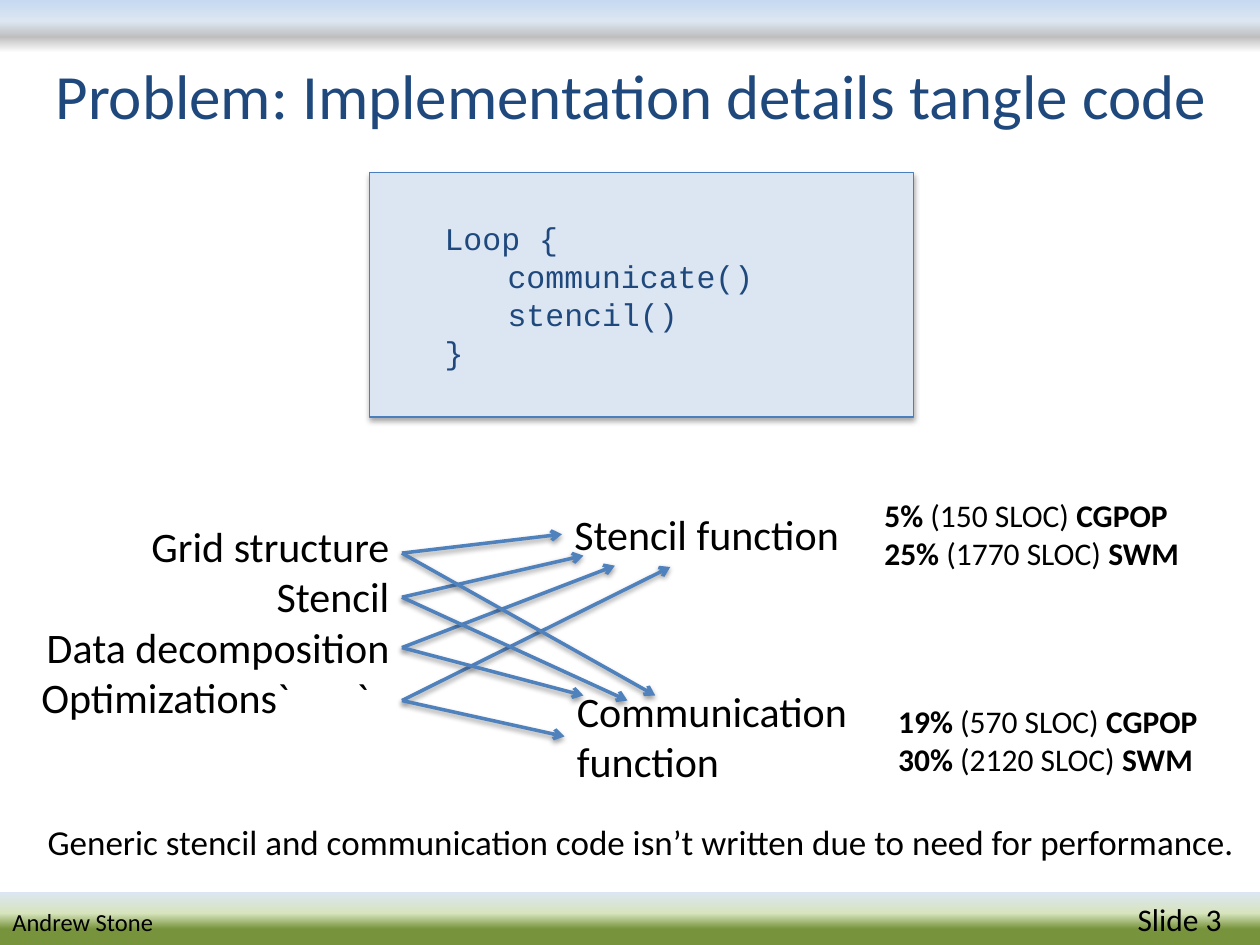
from typing import NamedTuple, Optional

from lxml.etree import SubElement
from pptx import Presentation
from pptx.dml.color import RGBColor
from pptx.enum.dml import MSO_THEME_COLOR
from pptx.enum.shapes import MSO_CONNECTOR, MSO_SHAPE
from pptx.enum.text import MSO_ANCHOR, MSO_AUTO_SIZE, PP_ALIGN
from pptx.oxml.ns import qn
from pptx.shapes.autoshape import Shape
from pptx.slide import Slide
from pptx.text.text import TextFrame
from pptx.util import Inches, Pt

BLACK = RGBColor(0x00, 0x00, 0x00)
NAVY = RGBColor(0x1F, 0x49, 0x7D)
BLUE = RGBColor(0x4F, 0x81, 0xBD)
EDGE = RGBColor(0x4B, 0x7E, 0xBC)
SKY = RGBColor(0xC6, 0xD9, 0xF1)
PALE = RGBColor(0xDC, 0xE6, 0xF2)
GRAY = RGBColor(0xBF, 0xBF, 0xBF)
WHITE = RGBColor(0xFF, 0xFF, 0xFF)
LIME = RGBColor(0xD7, 0xE4, 0xBD)
GREEN = RGBColor(0x77, 0x93, 0x3C)


class Run(NamedTuple):
    text: str
    bold: Optional[bool] = None


class Label(NamedTuple):
    left: float
    top: float
    width: float
    height: float
    lines: list[list[Run]]
    size: int = 24
    align: PP_ALIGN = PP_ALIGN.LEFT
    wrap: bool = False


class Arrow(NamedTuple):
    start: float
    x: float
    y: float
    goal: Optional[Shape] = None


class Stop(NamedTuple):
    place: int
    color: RGBColor


def plain(*lines: str) -> list[list[Run]]:
    return [[Run(line)] for line in lines]


def share(part: str, count: int, model: str) -> list[Run]:
    return [Run(part, True), Run(f" ({count} SLOC) "), Run(model, True)]


def write(frame: TextFrame, lines: list[list[Run]], size: int, color: RGBColor,
          face: str = "Calibri", align: PP_ALIGN = PP_ALIGN.LEFT) -> None:
    for index, line in enumerate(lines):
        para = frame.add_paragraph() if index else frame.paragraphs[0]
        para.alignment = align
        para.font.name = face
        para.font.size = Pt(size)
        para.font.color.rgb = color
        for item in line:
            run = para.add_run()
            run.text = item.text
            run.font.bold = item.bold


def add_label(slide: Slide, label: Label) -> Shape:
    box = slide.shapes.add_textbox(*map(Inches, label[:4]))
    frame = box.text_frame
    frame.word_wrap = label.wrap
    frame.auto_size = MSO_AUTO_SIZE.SHAPE_TO_FIT_TEXT
    write(frame, label.lines, label.size, BLACK, align=label.align)
    return box


def add_band(slide: Slide, top: float, stops: list[Stop]) -> Shape:
    band = slide.shapes.add_shape(
        MSO_SHAPE.RECTANGLE, 0, Inches(top), Inches(10), Inches(0.42))
    band.shadow.inherit = False
    band.line.fill.background()
    band.fill.gradient()
    band.fill.gradient_angle = 270
    ramp = next(band._element.iter(qn("a:gsLst")))
    ramp.clear()
    for stop in stops:
        mark = SubElement(ramp, qn("a:gs"), pos=str(stop.place * 1000))
        SubElement(mark, qn("a:srgbClr"), val=str(stop.color))
    return band


def add_arrow(slide: Slide, arrow: Arrow) -> None:
    line = slide.shapes.add_connector(
        MSO_CONNECTOR.STRAIGHT, Inches(3.19), Inches(arrow.start),
        Inches(arrow.x), Inches(arrow.y))
    if arrow.goal is not None:
        line.end_connect(arrow.goal, 1)
    line.line.color.rgb = BLUE
    line.line.width = Pt(2)
    SubElement(line.line._get_or_add_ln(), qn("a:tailEnd"), type="arrow")


def add_foot(slide: Slide) -> None:
    band = add_band(slide, 7.08, [Stop(0, PALE), Stop(40, LIME), Stop(70, GREEN)])
    frame = band.text_frame
    frame.vertical_anchor = MSO_ANCHOR.MIDDLE
    write(frame, [[Run("Andrew Stone\t"), Run("Slide 3")]], 14, BLACK)
    para = frame.paragraphs[0]
    para.runs[1].font.size = Pt(18)
    tabs = para._p.get_or_add_pPr().makeelement(qn("a:tabLst"))
    SubElement(tabs, qn("a:tab"), pos=str(Inches(8.93)), algn="l")
    para._p.pPr.insert(0, tabs)


def add_code(slide: Slide) -> None:
    box = slide.shapes.add_shape(
        MSO_SHAPE.RECTANGLE, Inches(2.93), Inches(1.37), Inches(4.32), Inches(1.94))
    box.fill.solid()
    box.fill.fore_color.rgb = PALE
    box.line.color.rgb = EDGE
    box.line.width = Pt(0.75)
    frame = box.text_frame
    frame.vertical_anchor = MSO_ANCHOR.MIDDLE
    write(frame, plain("Loop {", "\tcommunicate()", "\tstencil()", "}"),
          18, NAVY, "Courier New")
    for para in frame.paragraphs:
        para.level = 1
        para._p.pPr.set("marL", str(Inches(0.5)))
        para._p.pPr.set("indent", "0")


def main() -> None:
    deck = Presentation()
    deck.slide_width, deck.slide_height = Inches(10), Inches(7.5)
    slide = deck.slides.add_slide(deck.slide_layouts[5])

    title = slide.shapes.title
    title.left, title.top = Inches(0.23), Inches(0.12)
    title.width, title.height = Inches(9.56), Inches(1.25)
    title.text_frame.vertical_anchor = MSO_ANCHOR.MIDDLE
    write(title.text_frame, plain("Problem: Implementation details tangle code"),
          36, NAVY, align=PP_ALIGN.CENTER)

    add_band(slide, 0, [Stop(0, SKY), Stop(40, PALE), Stop(70, GRAY), Stop(100, WHITE)])
    add_foot(slide)

    add_label(slide, Label(
        0.23, 4.08, 2.96, 1.72,
        plain("Grid structure", "Stencil", "Data decomposition", "Optimizations`\t\t`\t"),
        align=PP_ALIGN.RIGHT))
    stencil = add_label(slide, Label(4.46, 3.99, 2.33, 0.5, plain("Stencil function")))
    comm = add_label(slide, Label(
        4.48, 5.39, 2.44, 0.91, plain("Communication function"), wrap=True))
    add_label(slide, Label(
        7.03, 5.52, 2.59, 0.71,
        [share("19%", 570, "CGPOP"), share("30%", 2120, "SWM")], 18))
    add_label(slide, Label(
        6.92, 3.89, 2.55, 0.71,
        [share("5%", 150, "CGPOP"), share("25%", 1770, "SWM")], 18))

    starts = [4.39, 4.74, 5.14, 5.56]
    upper = [(4.46, 4.24, stencil), (4.63, 4.41), (4.88, 4.49), (5.32, 4.5)]
    lower = [(5.2, 5.52), (4.98, 5.56), (4.63, 5.52), (4.48, 5.84, comm)]
    for ends in (upper, lower):
        for start, end in zip(starts, ends):
            add_arrow(slide, Arrow(start, *end))

    add_label(slide, Label(
        0.28, 6.46, 9.73, 0.44,
        plain("Generic stencil and communication code isn’t written due to need for performance."),
        20))
    add_code(slide)
    deck.save("out.pptx")


if __name__ == "__main__":
    main()
